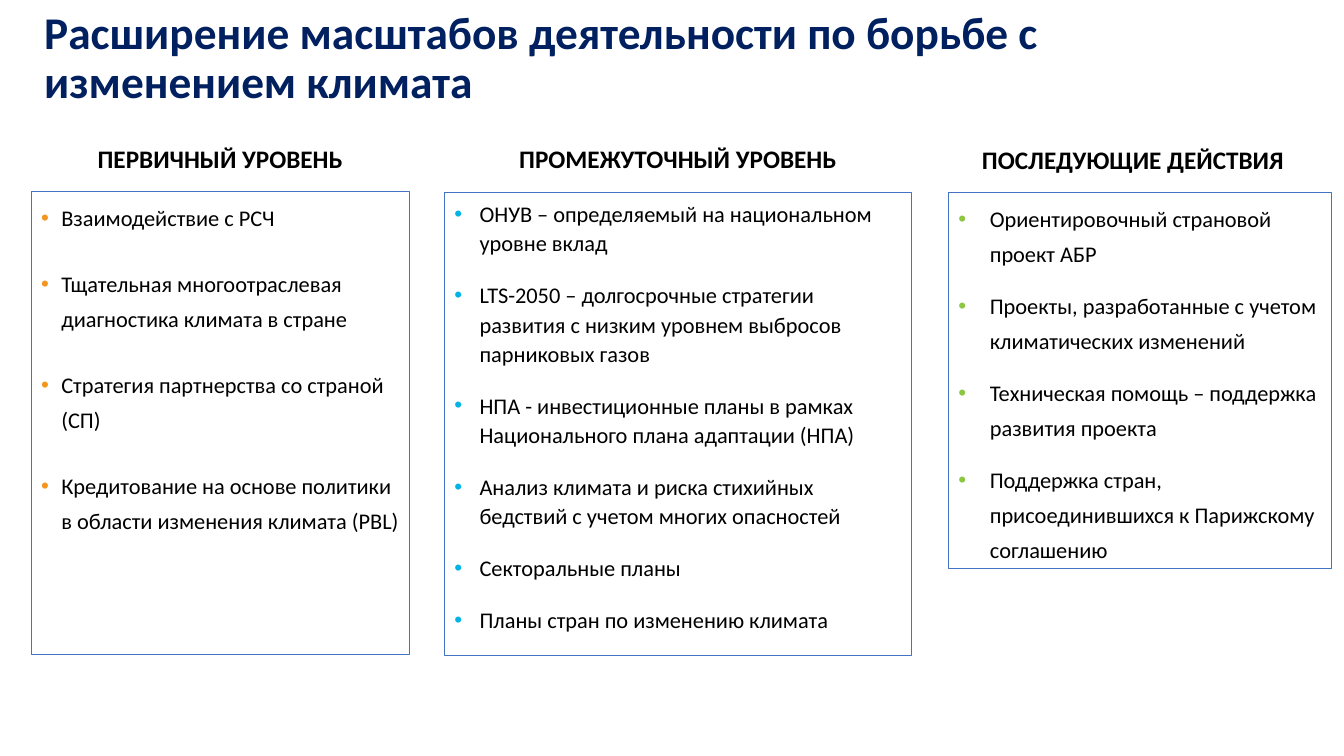
from dataclasses import dataclass

from lxml import etree
from pptx import Presentation
from pptx import util as u
from pptx.dml.color import RGBColor
from pptx.enum import shapes, text
from pptx.oxml import ns


@dataclass(frozen=True)
class Theme:
    font: str = "Calibri"
    title_size: float = 32.4
    heading_size: float = 18
    body_size: float = 16
    navy: str = "002060"
    black: str = "000000"
    border: str = "4472C4"
    orange: str = "F3951F"
    cyan: str = "01B4E5"
    green: str = "8DC640"


@dataclass(frozen=True)
class Box:
    left: float
    top: float
    width: float
    height: float

    def emu(self) -> tuple:
        return tuple(u.Pt(v) for v in (self.left, self.top, self.width, self.height))


@dataclass(frozen=True)
class Level:
    heading: str
    heading_box: Box
    list_box: Box
    bullet_color: str
    indent: float
    line_pitch: float
    space_before: float
    space_after: float
    grows: bool
    items: tuple


THEME = Theme()
TITLE = "Расширение масштабов деятельности по борьбе с изменением климата"
TITLE_BOX = Box(24.5, 12.2, 905, 60.5)

LEVELS = (
    Level("ПЕРВИЧНЫЙ УРОВЕНЬ", Box(22.3, 98.6, 270, 29), Box(22.3, 136.8, 270, 330.5),
          THEME.orange, 14.4, 25, 10, 12, False,
          ("Взаимодействие с РСЧ",
           "Тщательная многоотраслевая диагностика климата в стране",
           "Стратегия партнерства со страной (СП)",
           "Кредитование на основе политики в области изменения климата (PBL)")),
    Level("ПРОМЕЖУТОЧНЫЙ УРОВЕНЬ", Box(317.5, 98.6, 333.4, 29), Box(317.5, 137.5, 333.4, 330.5),
          THEME.cyan, 18, 21, 10, 6, False,
          ("ОНУВ – определяемый на национальном уровне вклад",
           "LTS-2050 – долгосрочные стратегии развития с низким уровнем выбросов парниковых газов",
           "НПА - инвестиционные планы в рамках Национального плана адаптации (НПА)",
           "Анализ климата и риска стихийных бедствий с учетом многих опасностей",
           "Секторальные планы",
           "Планы стран по изменению климата")),
    Level("ПОСЛЕДУЮЩИЕ ДЕЙСТВИЯ", Box(673.9, 99.4, 270.7, 29), Box(677.5, 137.5, 273.6, 268.6),
          THEME.green, 22.5, 25, 0, 12, True,
          ("Ориентировочный страновой проект АБР",
           "Проекты, разработанные с учетом климатических изменений",
           "Техническая помощь – поддержка развития проекта",
           "Поддержка стран, присоединившихся к Парижскому соглашению")),
)


def write(paragraph, content: str, *, size: float, color: str = THEME.black,
          bold: bool = False, align=text.PP_ALIGN.LEFT) -> None:
    paragraph.alignment = align
    run = paragraph.add_run()
    run.text = content
    run.font.name = THEME.font
    run.font.size = u.Pt(size)
    run.font.bold = bold
    run.font.color.rgb = RGBColor.from_string(color)


def add_bullet(paragraph, color: str, indent: float) -> None:
    """Give the paragraph a coloured bullet and a hanging indent."""
    properties = paragraph._p.get_or_add_pPr()
    properties.set("marL", str(u.Pt(indent)))
    properties.set("indent", str(-u.Pt(indent)))
    bullet_color = etree.SubElement(properties, ns.qn("a:buClr"))
    etree.SubElement(bullet_color, ns.qn("a:srgbClr")).set("val", color)
    etree.SubElement(properties, ns.qn("a:buFont")).set("typeface", "Arial")
    etree.SubElement(properties, ns.qn("a:buChar")).set("char", "•")


def add_label(slide, content: str, box: Box, *, anchor=text.MSO_ANCHOR.TOP, **style):
    frame = slide.shapes.add_textbox(*box.emu()).text_frame
    frame.word_wrap = True
    frame.vertical_anchor = anchor
    write(frame.paragraphs[0], content, **style)
    return frame


def add_list(slide, level: Level) -> None:
    panel = slide.shapes.add_shape(shapes.MSO_SHAPE.RECTANGLE, *level.list_box.emu())
    panel.shadow.inherit = False
    panel.fill.background()
    panel.line.color.rgb = RGBColor.from_string(THEME.border)
    panel.line.width = u.Pt(0.75)
    frame = panel.text_frame
    frame.word_wrap = True
    frame.vertical_anchor = text.MSO_ANCHOR.TOP
    if level.grows:
        frame.auto_size = text.MSO_AUTO_SIZE.SHAPE_TO_FIT_TEXT
    for index, item in enumerate(level.items):
        paragraph = frame.add_paragraph() if index else frame.paragraphs[0]
        add_bullet(paragraph, level.bullet_color, level.indent)
        paragraph.line_spacing = u.Pt(level.line_pitch)
        paragraph.space_before = u.Pt(level.space_before if index else 0)
        paragraph.space_after = u.Pt(level.space_after)
        write(paragraph, item, size=THEME.body_size)


def main() -> None:
    deck = Presentation()
    deck.slide_width, deck.slide_height = u.Pt(960), u.Pt(540)
    slide = deck.slides.add_slide(deck.slide_layouts[6])
    title = add_label(slide, TITLE, TITLE_BOX, anchor=text.MSO_ANCHOR.MIDDLE,
                      size=THEME.title_size, color=THEME.navy, bold=True)
    title.paragraphs[0].line_spacing = 0.9
    for level in LEVELS:
        add_list(slide, level)
        heading = add_label(slide, level.heading, level.heading_box, size=THEME.heading_size,
                            bold=True, align=text.PP_ALIGN.CENTER)
        heading.auto_size = text.MSO_AUTO_SIZE.SHAPE_TO_FIT_TEXT
    deck.save("out.pptx")


if __name__ == "__main__":
    main()
